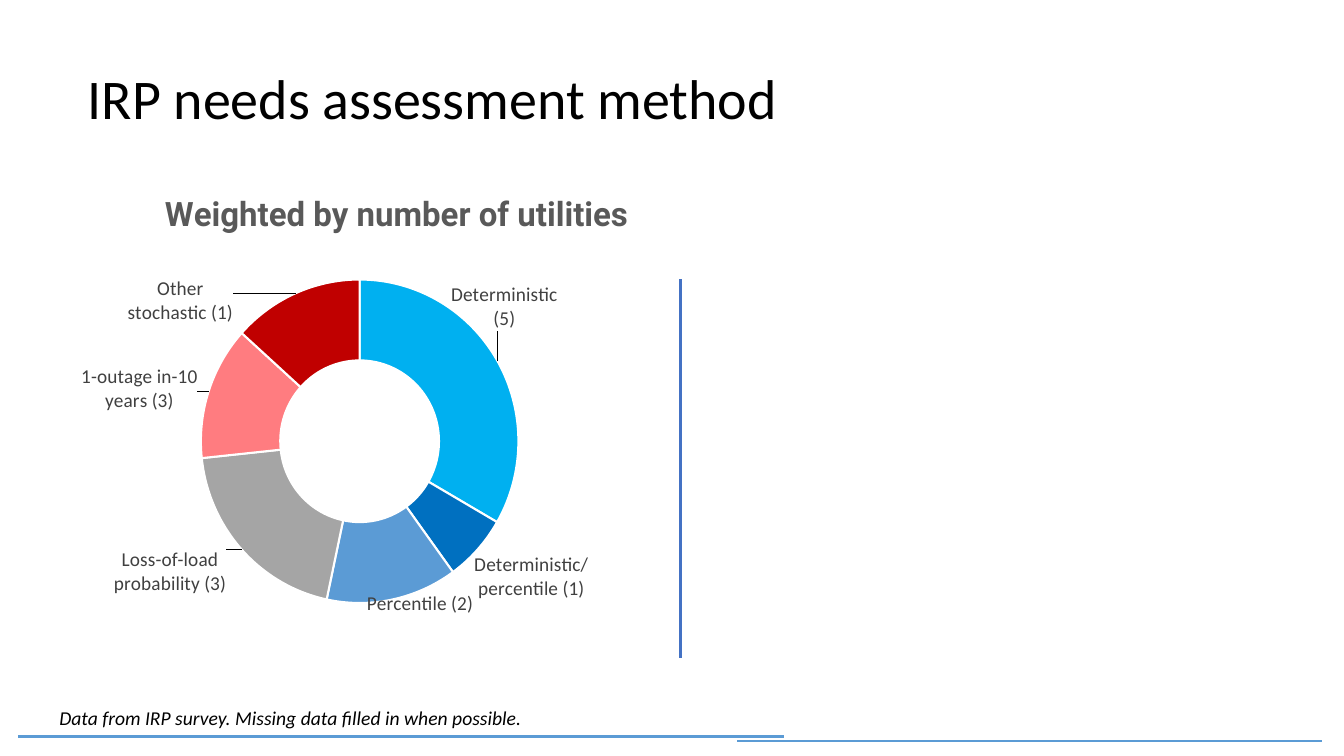
from lxml import etree
from pptx import Presentation
from pptx.chart.data import CategoryChartData
from pptx.dml.color import RGBColor
from pptx.enum.chart import XL_CHART_TYPE as ChartType
from pptx.enum.shapes import MSO_CONNECTOR as Connector
from pptx.enum.text import MSO_ANCHOR as Anchor, PP_ALIGN as Align
from pptx.oxml import parse_xml
from pptx.oxml.ns import qn
from pptx.util import Inches, Pt

BLACK = RGBColor(0x00, 0x00, 0x00)
WHITE = RGBColor(0xFF, 0xFF, 0xFF)
TITLE_GRAY = RGBColor(0x59, 0x59, 0x59)
LABEL_GRAY = RGBColor(0x40, 0x40, 0x40)
LIGHT_BLUE = RGBColor(0x5B, 0x9B, 0xD5)
DIVIDER_BLUE = RGBColor(0x44, 0x72, 0xC4)

TITLE = "IRP needs assessment method"
CHART_TITLE = "Weighted by number of utilities"
NOTE = "Data from IRP survey. Missing data filled in when possible."

METHODS = [
    ("Deterministic (5)", 5, RGBColor(0x00, 0xB0, 0xF0), (0.07, -0.15)),
    ("Deterministic/percentile (1)", 1, RGBColor(0x00, 0x70, 0xC0), (0.14, 0.11)),
    ("Percentile (2)", 2, LIGHT_BLUE, (0.06, 0.09)),
    ("Loss-of-load probability (3)", 3, RGBColor(0xA5, 0xA5, 0xA5), (-0.17, 0.1)),
    ("1-outage in-10 years (3)", 2, RGBColor(0xFF, 0x7C, 0x80), (-0.18, -0.03)),
    ("Other stochastic (1)", 2, RGBColor(0xC0, 0x00, 0x00), (-0.22, -0.06)),
]
LINES = [
    ((7.31, 7.35), (13.11, 7.35), LIGHT_BLUE, 1.5),
    ((0.18, 7.31), (7.78, 7.31), LIGHT_BLUE, 2.25),
    ((6.75, 2.77), (6.75, 6.53), DIVIDER_BLUE, 2.25),
]
CHART_NS = "http://schemas.openxmlformats.org/drawingml/2006/chart"
CHART15_NS = "http://schemas.microsoft.com/office/drawing/2012/chart"
LABEL_SIZE = (
    f'<c:extLst xmlns:c="{CHART_NS}"><c:ext uri="{{CE6537A1-D6FC-4f65-9D91-7224C49458BB}}" '
    f'xmlns:c15="{CHART15_NS}"><c15:layout><c:manualLayout><c:w val="0.2"/><c:h val="0.11"/>'
    "</c:manualLayout></c15:layout></c:ext></c:extLst>"
)


def add_run(paragraph, text, size, color, name="Calibri", bold=False, italic=False):
    run = paragraph.add_run()
    run.text = text
    font = run.font
    font.name, font.size, font.bold, font.italic = name, Pt(size), bold, italic
    font.color.rgb = color


def manual_layout(**values):
    layout = parse_xml(f'<c:layout xmlns:c="{CHART_NS}"><c:manualLayout/></c:layout>')
    for tag, value in values.items():
        etree.SubElement(layout[0], qn(f"c:{tag}")).set("val", str(value))
    return layout


def add_line(slide, start, end, color, width):
    line = slide.shapes.add_connector(Connector.STRAIGHT, *map(Inches, start + end))
    line.line.color.rgb = color
    line.line.width = Pt(width)
    etree.SubElement(line.element.spPr, qn("a:effectLst"))


def add_title(slide):
    title = slide.shapes.title
    title.left, title.top = Inches(0.77), Inches(0.42)
    title.width, title.height = Inches(10.7), Inches(1.18)
    title.text_frame.vertical_anchor = Anchor.MIDDLE
    paragraph = title.text_frame.paragraphs[0]
    paragraph.alignment = Align.LEFT
    paragraph.line_spacing = 0.9
    add_run(paragraph, TITLE, 40, BLACK)


def add_doughnut(slide):
    data = CategoryChartData()
    data.categories = [str(number) for number in range(1, len(METHODS) + 1)]
    data.add_series("Series 1", [value for _, value, _, _ in METHODS])
    chart = slide.shapes.add_chart(
        ChartType.DOUGHNUT, Inches(0.28), Inches(1.59), Inches(6.01), Inches(4.87), data
    ).chart
    chart.has_legend = False
    chart.font.name, chart.font.size = "Calibri", Pt(16)
    chart.font.color.rgb = BLACK
    add_run(chart.chart_title.text_frame.paragraphs[0], CHART_TITLE, 24, TITLE_GRAY, "Roboto", True)
    chart_title = chart.chart_title._element
    for old in chart_title.findall(qn("c:layout")):
        chart_title.remove(old)
    chart_title.find(qn("c:tx")).addnext(manual_layout(xMode="edge", yMode="edge", x=0.22, y=0.05))

    plot = chart.plots[0]
    plot.vary_by_categories = True
    plot._element.find(qn("c:holeSize")).set("val", "75")
    plot_area = plot._element.getparent()
    for old in plot_area.findall(qn("c:layout")):
        plot_area.remove(old)
    plot_area.insert(0, manual_layout(
        layoutTarget="inner", xMode="edge", yMode="edge", x=0.283, y=0.243, w=0.549, h=0.659))

    series = plot.series[0]
    labels = series.data_labels
    labels.show_value = True
    labels.font.name, labels.font.size = "Calibri", Pt(14)
    labels.font.color.rgb = LABEL_GRAY
    for index, (text, _, color, (x, y)) in enumerate(METHODS):
        point = series.points[index]
        point.format.fill.solid()
        point.format.fill.fore_color.rgb = color
        point.format.line.color.rgb = WHITE
        point.format.line.width = Pt(1.5)
        add_run(point.data_label.text_frame.paragraphs[0], text, 14, LABEL_GRAY)
        label = next(item for item in labels._element.findall(qn("c:dLbl"))
                     if item.find(qn("c:idx")).get("val") == str(index))
        label.insert(1, manual_layout(x=x, y=y))
        label.append(parse_xml(LABEL_SIZE))


def add_note(slide):
    box = slide.shapes.add_textbox(Inches(0.49), Inches(6.95), Inches(6.53), Inches(0.34))
    box.text_frame.word_wrap = True
    add_run(box.text_frame.paragraphs[0], NOTE, 14, BLACK, italic=True)


def main():
    presentation = Presentation()
    presentation.slide_width, presentation.slide_height = Inches(13.33), Inches(7.5)
    slide = presentation.slides.add_slide(presentation.slide_layouts[5])
    add_title(slide)
    add_doughnut(slide)
    add_note(slide)
    for line in LINES:
        add_line(slide, *line)
    presentation.save("out.pptx")


if __name__ == "__main__":
    main()
